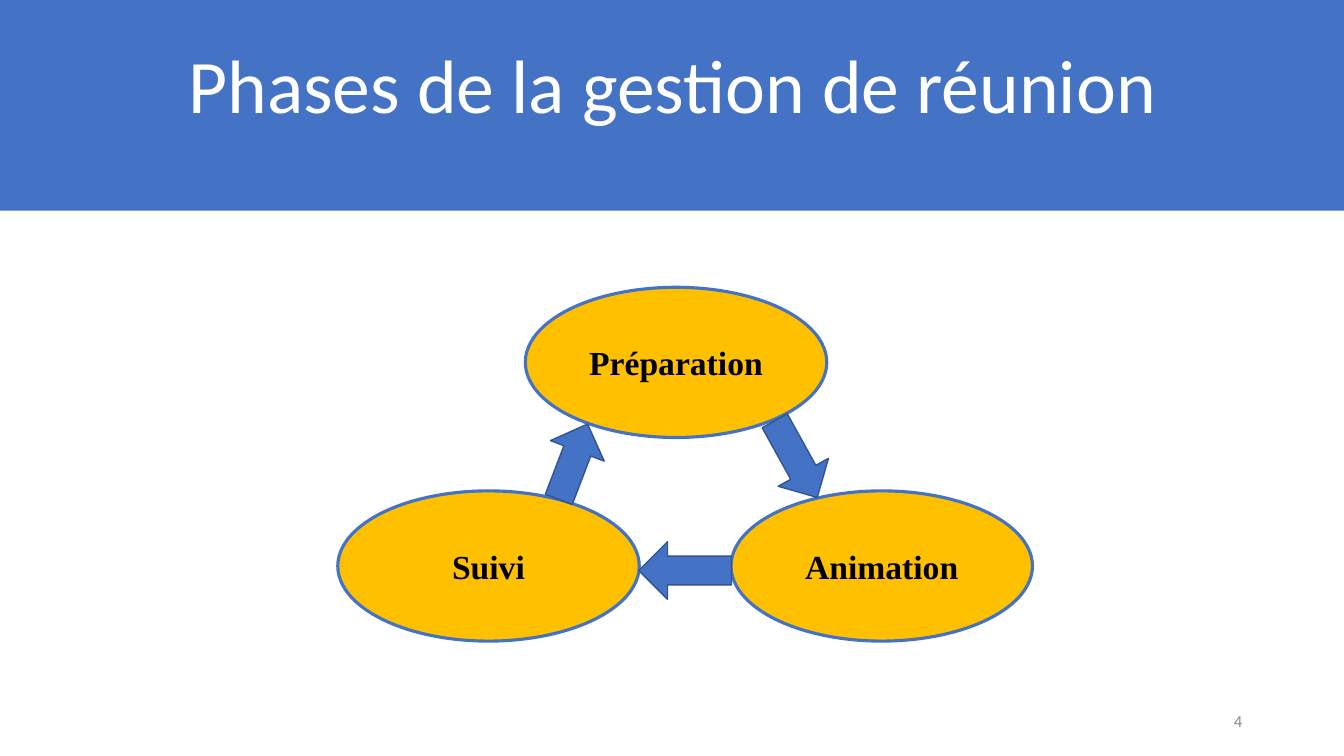
from pptx import Presentation
from pptx.dml.color import RGBColor
from pptx.enum.shapes import MSO_SHAPE
from pptx.enum.text import MSO_ANCHOR, PP_ALIGN
from pptx.util import Inches, Pt

RECT, OVAL, ARROW = MSO_SHAPE.RECTANGLE, MSO_SHAPE.OVAL, MSO_SHAPE.DOWN_ARROW
MIDDLE, BOTTOM = MSO_ANCHOR.MIDDLE, MSO_ANCHOR.BOTTOM
CENTER, RIGHT = PP_ALIGN.CENTER, PP_ALIGN.RIGHT

COLORS = {
    "blue": "4472C4",
    "dark_blue": "325491",
    "gold": "FFC000",
    "white": "FFFFFF",
    "black": "000000",
    "gray": "8C8C8C",
}


def add_filled(kind, box, fill, line=None, width=1):
    sp = s.shapes.add_shape(kind, *[Inches(v) for v in box])
    sp.shadow.inherit = False
    sp.fill.solid()
    sp.fill.fore_color.rgb = RGBColor.from_string(COLORS[fill])
    if line:
        sp.line.color.rgb = RGBColor.from_string(COLORS[line])
        sp.line.width = Pt(width)
    else:
        sp.line.fill.background()
    return sp


def write(sp, text, color, anchor, align, font):
    tf = sp.text_frame
    tf.word_wrap = True
    tf.vertical_anchor = anchor
    p = tf.paragraphs[0]
    p.alignment = align
    r = p.add_run()
    r.text = text
    r.font.color.rgb = RGBColor.from_string(COLORS[color])
    for name, value in font.items():
        setattr(r.font, name, value)
    return p


prs = Presentation()
prs.slide_width, prs.slide_height = Inches(13.33), Inches(7.5)
s = prs.slides.add_slide(prs.slide_layouts[6])

# Title band and page number
add_filled(RECT, (0, 0, 13.33, 2.09), "blue")
title = s.shapes.add_textbox(Inches(0.92), Inches(0.32), Inches(11.5), Inches(1.02))
p = write(title, "Phases de la gestion de réunion", "white", BOTTOM, CENTER,
          {"name": "Calibri", "size": Pt(54)})
p.line_spacing = 0.9

number = s.shapes.add_textbox(Inches(9.42), Inches(6.95), Inches(3), Inches(0.4))
p = write(number, "4", "gray", MIDDLE, RIGHT, {"name": "Calibri", "size": Pt(12)})
p.space_after = Pt(6)

# Phases of the cycle
PHASE_FONT = {"name": "Times New Roman", "size": Pt(24), "bold": True}
for phase, left, top in [
    ("Préparation", 5.21, 2.85),
    ("Suivi", 3.35, 4.87),
    ("Animation", 7.25, 4.87),
]:
    sp = add_filled(OVAL, (left, top, 2.99, 1.49), "gold", "blue", 2.25)
    write(sp, phase, "black", MIDDLE, CENTER, PHASE_FONT)

# Arrows from each phase to the next
for left, top, length, rotation in [
    (7.61, 4.12, 0.87, 331),
    (6.51, 5.2, 0.92, 90),
    (5.4, 4.18, 0.8, 200.9),
]:
    sp = add_filled(ARROW, (left, top, 0.57, length), "blue", "dark_blue")
    sp.rotation = rotation

prs.save("out.pptx")
